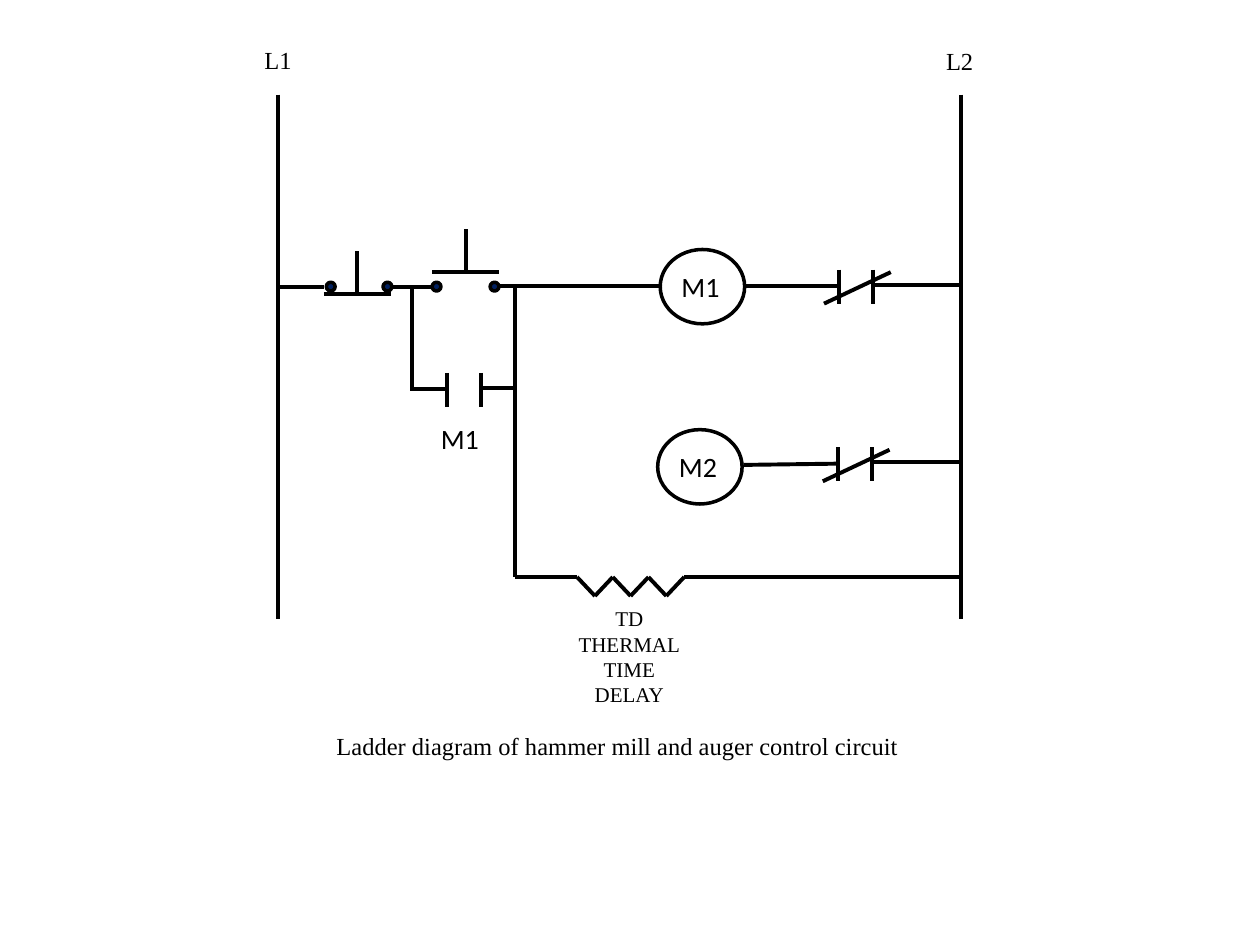
"""Build a ladder diagram slide for a hammer mill and auger control circuit."""
from itertools import pairwise
from typing import NamedTuple

from lxml import etree
from pptx import Presentation
from pptx.dml.color import RGBColor
from pptx.enum.shapes import MSO_CONNECTOR, MSO_SHAPE
from pptx.enum.text import MSO_ANCHOR, MSO_AUTO_SIZE, PP_ALIGN
from pptx.oxml.ns import qn
from pptx.util import Inches, Pt

STRAIGHT = MSO_CONNECTOR.STRAIGHT
OVAL = MSO_SHAPE.OVAL
LEFT, CENTER = PP_ALIGN.LEFT, PP_ALIGN.CENTER
TOP = MSO_ANCHOR.TOP
NO_FIT = MSO_AUTO_SIZE.NONE

COLORS = {"ink": "000000", "terminal": "002060", "paper": "FFFFFF"}
SERIF, SANS = "Times New Roman", "Calibri"
SLIDE_WIDTH, SLIDE_HEIGHT = Inches(10), Inches(7.5)
COLUMNS, ROWS = 100, 75
RAIL_LEFT, RAIL_RIGHT, BRANCH, SEAL = 22.1, 76.3, 40.9, 32.7
RAIL_TOP, RAIL_BOTTOM = 7.5, 49.1
MAIN_ROW, HEATER_ROW = 22.8, 45.8
HEATER_LEFT, HEATER_RIGHT, HEATER_DEPTH, HEATER_STROKES = 45.8, 54.3, 1.5, 6
CONTACT_GAP, CONTACT_HEIGHT = 2.7, 2.7
COIL_WIDTH, COIL_HEIGHT = 6.7, 5.9
BUTTON_WIDTH, STEM_HEIGHT, TERMINAL_SIZE = 5.3, 3.4, 0.7


class Wire(NamedTuple):
    """A straight wire between two grid points."""
    start_column: float
    start_row: float
    end_column: float
    end_row: float


class Contact(NamedTuple):
    """A pair of contact bars, crossed by a slash when normally closed."""
    column: float
    row: float
    closed: bool


class Button(NamedTuple):
    """A push button with its bar and two terminals."""
    column: float
    row: float
    terminals: tuple[float, float]


class Coil(NamedTuple):
    """A round motor coil with its name."""
    name: str
    column: float
    row: float


class Label(NamedTuple):
    """A text with its box and format."""
    text: str
    column: float
    row: float
    width: float
    height: float
    font: str = SERIF
    size: int = 14
    align: PP_ALIGN = LEFT


WIRES = [
    Wire(RAIL_LEFT, RAIL_TOP, RAIL_LEFT, RAIL_BOTTOM),
    Wire(RAIL_RIGHT, RAIL_TOP, RAIL_RIGHT, RAIL_BOTTOM),
    Wire(RAIL_LEFT, MAIN_ROW, 25.7, MAIN_ROW),
    Wire(31, MAIN_ROW, 34.3, MAIN_ROW),
    Wire(39.6, 22.7, 52.4, 22.7),
    Wire(SEAL, MAIN_ROW, SEAL, 31),
    Wire(SEAL, 30.9, 35.4, 30.9),
    Wire(38.2, 30.8, BRANCH, 30.8),
    Wire(59.1, 22.7, 66.5, 22.7),
    Wire(69.3, 22.6, RAIL_RIGHT, 22.6),
    Wire(59, 36.9, 66.4, 36.8),
    Wire(69.2, 36.7, RAIL_RIGHT, 36.7),
    Wire(BRANCH, 22.6, BRANCH, HEATER_ROW),
    Wire(BRANCH, HEATER_ROW, HEATER_LEFT, HEATER_ROW),
    Wire(HEATER_RIGHT, HEATER_ROW, RAIL_RIGHT, HEATER_ROW),
]
CONTACTS = [Contact(35.5, 29.6, False), Contact(66.6, 21.4, True), Contact(66.5, 35.5, True)]
BUTTONS = [Button(25.7, 23.3, (25.9, 30.4)), Button(34.3, 21.6, (34.3, 38.9))]
COILS = [Coil("M1", 52.4, 19.8), Coil("M2", 52.2, 34.1)]
LABELS = [
    Label("M1", 34, 33, 5.2, 3.7, SANS, 16),
    Label("L1", 20, 3.1, 5.1, 3.4),
    Label("L2", 74.1, 3.2, 5.1, 3.4),
    Label("TD\nTHERMAL\nTIME\nDELAY", 44.8, 47.6, 10.3, 9.1, size=12, align=CENTER),
]
CAPTION = Label("Ladder diagram of hammer mill and auger control circuit", 25.7, 57.5, 48.6, 3.4)


def x(column: float) -> int:
    """Turn grid columns into a length."""
    return round(SLIDE_WIDTH * column / COLUMNS)


def y(row: float) -> int:
    """Turn grid rows into a length."""
    return round(SLIDE_HEIGHT * row / ROWS)


def color(name: str) -> RGBColor:
    """Look up a named colour."""
    return RGBColor.from_string(COLORS[name])


def write(shape, text: str, *, font: str, size: int, align: PP_ALIGN) -> None:
    """Fill a shape with formatted text."""
    frame = shape.text_frame
    frame.text = text
    frame.word_wrap = True
    frame.auto_size = NO_FIT
    frame.vertical_anchor = TOP
    for paragraph in frame.paragraphs:
        paragraph.alignment = align
        paragraph.line_spacing = 1.0
        paragraph.space_before = Pt(0)
        paragraph.font.name = font
        paragraph.font.size = Pt(size)
        paragraph.font.color.rgb = color("ink")


def draw_label(slide, label: Label) -> None:
    """Add a text box for a label."""
    box = slide.shapes.add_textbox(x(label.column), y(label.row), x(label.width), y(label.height))
    write(box, label.text, font=label.font, size=label.size, align=label.align)


def draw_wire(slide, wire: Wire) -> None:
    """Add a straight black connector."""
    connector = slide.shapes.add_connector(
        STRAIGHT, x(wire.start_column), y(wire.start_row), x(wire.end_column), y(wire.end_row))
    connector.line.color.rgb = color("ink")
    connector.line.width = Pt(2.25)
    etree.SubElement(connector.element.spPr, qn("a:effectLst"))


def draw_circle(slide, column: float, row: float, width: float, height: float, fill: str) -> None:
    """Add an outlined ellipse."""
    circle = slide.shapes.add_shape(OVAL, x(column), y(row), x(width), y(height))
    circle.shadow.inherit = False
    circle.fill.solid()
    circle.fill.fore_color.rgb = color(fill)
    circle.line.color.rgb = color("ink")
    circle.line.width = Pt(2)


def draw_contact(slide, contact: Contact) -> None:
    """Draw the two bars of a contact and its slash."""
    left, top = contact.column, contact.row
    right, bottom = left + CONTACT_GAP, top + CONTACT_HEIGHT
    for column in (left, right):
        draw_wire(slide, Wire(column, top, column, bottom))
    if contact.closed:
        draw_wire(slide, Wire(right + 1.4, top + 0.2, left - 1.2, bottom))


def draw_button(slide, button: Button) -> None:
    """Draw the terminals, bar and stem of a push button."""
    for column in button.terminals:
        draw_circle(slide, column, 22.4, TERMINAL_SIZE, TERMINAL_SIZE, "terminal")
    middle = button.column + BUTTON_WIDTH / 2
    draw_wire(slide, Wire(button.column, button.row, button.column + BUTTON_WIDTH, button.row))
    draw_wire(slide, Wire(middle, button.row, middle, button.row - STEM_HEIGHT))


def draw_coil(slide, coil: Coil) -> None:
    """Draw a coil and its name."""
    draw_circle(slide, coil.column, coil.row, COIL_WIDTH, COIL_HEIGHT, "paper")
    draw_label(slide, Label(coil.name, coil.column + 0.7, coil.row + 1.1, 5.2, 3.7, SANS, 16))


def draw_heater(slide) -> None:
    """Draw the zigzag of the thermal time delay."""
    step = (HEATER_RIGHT - HEATER_LEFT) / HEATER_STROKES
    points = [(HEATER_LEFT + step * index, HEATER_ROW + HEATER_DEPTH * (index % 2))
              for index in range(HEATER_STROKES + 1)]
    for start, end in pairwise(points):
        draw_wire(slide, Wire(*start, *end))


def main() -> None:
    """Build and save the presentation."""
    presentation = Presentation()
    presentation.slide_width, presentation.slide_height = SLIDE_WIDTH, SLIDE_HEIGHT
    slide = presentation.slides.add_slide(presentation.slide_layouts.get_by_name("Title Only"))
    title = slide.shapes.title
    title.left, title.top = x(CAPTION.column), y(CAPTION.row)
    title.width, title.height = x(CAPTION.width), y(CAPTION.height)
    write(title, CAPTION.text, font=CAPTION.font, size=CAPTION.size, align=CAPTION.align)
    for draw, items in ((draw_wire, WIRES), (draw_button, BUTTONS), (draw_contact, CONTACTS),
                        (draw_coil, COILS), (draw_label, LABELS)):
        for item in items:
            draw(slide, item)
    draw_heater(slide)
    presentation.save("out.pptx")


if __name__ == "__main__":
    main()
